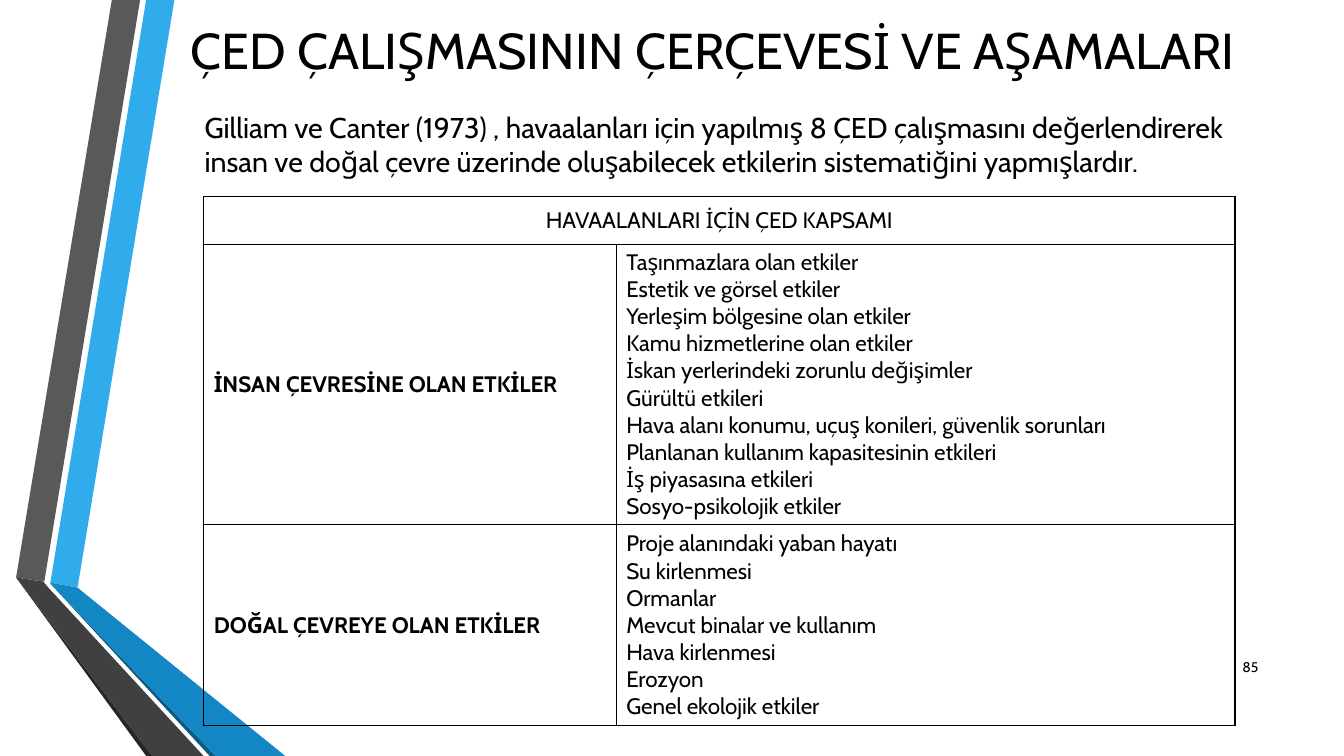
from dataclasses import dataclass

from lxml import etree
from pptx import Presentation, util as u
from pptx.dml import color
from pptx.enum import text as t
from pptx.oxml import ns


@dataclass(frozen=True)
class Theme:
    font: str = "Cabin"
    ink: str = "000000"
    sky: str = "30ACEC"
    blue: str = "1287C3"
    navy: str = "0C5A82"
    grey: str = "595959"
    dark: str = "404040"
    coal: str = "262626"
    title: float = 36
    lead: float = 20.4
    cell: float = 16
    page: float = 10
    rule: float = 1


TH = Theme()
WIDE, HIGH = 13.33, 7.5

# Ribbon outlines, in hundredths of an inch, back to front
BANDS = [
    (TH.sky, [(50, 578), (77, 583), (173, 0), (145, 0)]),
    (TH.grey, [(139, 0), (111, 0), (16, 573), (44, 577)]),
    (TH.coal, [(16, 573), (145, 750), (151, 750)]),
    (TH.navy, [(50, 579), (208, 750), (214, 750)]),
    (TH.blue, [(50, 578), (50, 579), (214, 750), (283, 750), (77, 583)]),
    (TH.dark, [(16, 573), (151, 750), (202, 750), (48, 583), (43, 577)]),
]

HEAD = "HAVAALANLARI İÇİN ÇED KAPSAMI"
SCOPE = [
    ("İNSAN ÇEVRESİNE OLAN ETKİLER", [
        "Taşınmazlara olan etkiler",
        "Estetik ve görsel etkiler",
        "Yerleşim bölgesine olan etkiler",
        "Kamu hizmetlerine olan etkiler",
        "İskan yerlerindeki zorunlu değişimler",
        "Gürültü etkileri",
        "Hava alanı konumu, uçuş konileri, güvenlik sorunları",
        "Planlanan kullanım kapasitesinin etkileri",
        "İş piyasasına etkileri",
        "Sosyo-psikolojik etkiler",
    ]),
    ("DOĞAL ÇEVREYE OLAN ETKİLER", [
        "Proje alanındaki yaban hayatı",
        "Su kirlenmesi",
        "Ormanlar",
        "Mevcut binalar ve kullanım",
        "Hava kirlenmesi",
        "Erozyon",
        "Genel ekolojik etkiler",
    ]),
]


def write(frame, lines, size=TH.cell, bold=False, align=t.PP_ALIGN.LEFT):
    """Fill a text frame, one paragraph per line."""
    for i, line in enumerate(lines):
        para = frame.paragraphs[0] if i == 0 else frame.add_paragraph()
        para.alignment = align
        run = para.add_run()
        run.text = line
        font = run.font
        font.name, font.size, font.bold = TH.font, u.Pt(size), bold
        font.color.rgb = color.RGBColor.from_string(TH.ink)


def label(slide, box, line, **form):
    """Place one wrapped text, centred in height in its box."""
    frame = slide.shapes.add_textbox(*map(u.Inches, box)).text_frame
    frame.word_wrap = True
    frame.vertical_anchor = t.MSO_ANCHOR.MIDDLE
    write(frame, [line], **form)


def ribbon(slide, box):
    """Draw the folded bands from the box's top left corner."""
    left, top, _, high = box
    scale = u.Inches(high) / 750
    for tint, pts in BANDS:
        pen = slide.shapes.build_freeform(*pts[0], scale=scale)
        pen.add_line_segments(pts[1:], close=True)
        band = pen.convert_to_shape(u.Inches(left), u.Inches(top))
        band.shadow.inherit = False
        band.fill.solid()
        band.fill.fore_color.rgb = color.RGBColor.from_string(tint)
        band.line.fill.background()


def border(cell):
    """Rule all four sides of a cell."""
    props = cell._tc.get_or_add_tcPr()
    for i, side in enumerate("LRTB"):
        line = etree.Element(ns.qn(f"a:ln{side}"), w=str(u.Pt(TH.rule)))
        fill = etree.SubElement(line, ns.qn("a:solidFill"))
        etree.SubElement(fill, ns.qn("a:srgbClr"), val=TH.ink)
        props.insert(i, line)


def grid(slide, box):
    """Build the scope table: a merged head, then one row per group."""
    wide, high = box[2:]
    rows = len(SCOPE) + 1
    table = slide.shapes.add_table(rows, 2, *map(u.Inches, box)).table
    table.first_row = table.horz_banding = False
    for col, share in zip(table.columns, (0.4, 0.6)):
        col.width = u.Inches(wide * share)
    for row, share in zip(table.rows, (0.09, 0.53, 0.38)):
        row.height = u.Inches(high * share)
    for cell in table.iter_cells():
        cell.fill.background()
        cell.vertical_anchor = t.MSO_ANCHOR.MIDDLE
        border(cell)
    top = table.cell(0, 0)
    top.merge(table.cell(0, 1))
    write(top.text_frame, [HEAD], align=t.PP_ALIGN.CENTER)
    for i, (group, items) in enumerate(SCOPE, 1):
        write(table.cell(i, 0).text_frame, [group], bold=True)
        write(table.cell(i, 1).text_frame, items)


def main():
    deck = Presentation()
    deck.slide_width, deck.slide_height = u.Inches(WIDE), u.Inches(HIGH)
    slide = deck.slides.add_slide(deck.slide_layouts[6])

    ribbon(slide, (0, 0, WIDE, HIGH))
    # Title and lead
    label(slide, (1.59, 0.12, 10.96, 0.74),
          "ÇED ÇALIŞMASININ ÇERÇEVESİ VE AŞAMALARI",
          size=TH.title, align=t.PP_ALIGN.CENTER)
    label(slide, (1.93, 0.97, 10.65, 0.92),
          "Gilliam ve Canter (1973) , havaalanları için yapılmış 8 ÇED "
          "çalışmasını değerlendirerek insan ve doğal çevre üzerinde "
          "oluşabilecek etkilerin sistematiğini yapmışlardır.",
          size=TH.lead)
    # Page number
    label(slide, (11.98, 6.42, 0.6, 0.4), "85",
          size=TH.page, align=t.PP_ALIGN.RIGHT)
    grid(slide, (2.02, 1.95, 10.23, 5.25))

    deck.save("out.pptx")


if __name__ == "__main__":
    main()
